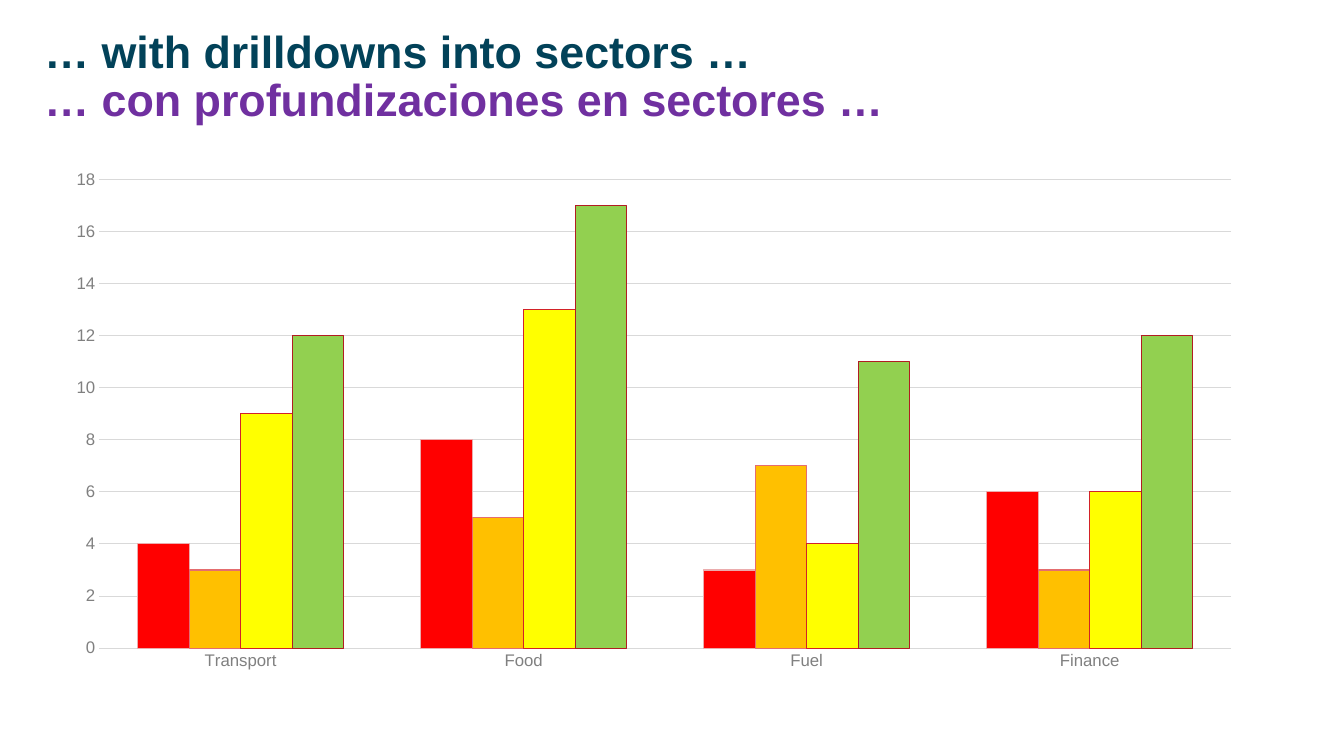
import pptx
import pptx.chart.data
import pptx.dml.color
import pptx.enum.chart
import pptx.enum.text
import pptx.util

Inches = pptx.util.Inches
Pt = pptx.util.Pt
RGBColor = pptx.dml.color.RGBColor

NAVY = RGBColor(0x02, 0x42, 0x59)
PURPLE = RGBColor(0x70, 0x30, 0xA0)
AXIS_GREY = RGBColor(0x80, 0x80, 0x80)
GRID_GREY = RGBColor(0xD9, 0xD9, 0xD9)
BLACK = RGBColor(0x00, 0x00, 0x00)
FONT = "Arial"

TITLE_BOX = (0.44, 0.16, 11.93, 1.23)
CHART_BOX = (0.52, 1.59, 11.93, 5.16)

TITLE_LINES = [
    ("… with drilldowns into sectors …", NAVY),
    ("… con profundizaciones en sectores …", PURPLE),
]
SECTORS = ["Transport", "Food", "Fuel", "Finance"]
# Name, values, fill, outline
SERIES = [
    ("Series 1", (4, 8, 3, 6), RGBColor(0xFF, 0x00, 0x00), RGBColor(0xEB, 0xAC, 0xAD)),
    ("Series 2", (3, 5, 7, 3), RGBColor(0xFF, 0xC0, 0x00), RGBColor(0xE4, 0x6D, 0x6F)),
    ("Series 3", (9, 13, 4, 6), RGBColor(0xFF, 0xFF, 0x00), RGBColor(0xD2, 0x22, 0x28)),
    ("Series 4", (12, 17, 11, 12), RGBColor(0x92, 0xD0, 0x50), RGBColor(0xB1, 0x1D, 0x22)),
]


def style_font(font, size, color, bold=False):
    font.name = FONT
    font.size = Pt(size)
    font.bold = bold
    font.color.rgb = color


def fill_title(title, box):
    """Place the two-language title in the given box."""
    title.left, title.top, title.width, title.height = map(Inches, box)
    frame = title.text_frame
    frame.margin_left = frame.margin_right = 0
    frame.margin_top = frame.margin_bottom = 0
    frame.word_wrap = True
    frame.auto_size = pptx.enum.text.MSO_AUTO_SIZE.NONE
    frame.vertical_anchor = pptx.enum.text.MSO_ANCHOR.MIDDLE
    para = frame.paragraphs[0]
    para.text = "\v".join(line for line, color in TITLE_LINES)
    para.alignment = pptx.enum.text.PP_ALIGN.LEFT
    para.line_spacing = 0.9
    for span, (line, color) in zip(para.runs, TITLE_LINES):
        style_font(span.font, 32, color, bold=True)


def add_sector_chart(page, box):
    """Draw the clustered columns by sector in the given box."""
    data = pptx.chart.data.CategoryChartData()
    data.categories = SECTORS
    for name, values, fill, outline in SERIES:
        data.add_series(name, values)
    kind = pptx.enum.chart.XL_CHART_TYPE.COLUMN_CLUSTERED
    chart = page.shapes.add_chart(kind, *map(Inches, box), data).chart
    chart.has_title = False
    chart.has_legend = False
    style_font(chart.font, 10, BLACK)

    # Columns
    plot = chart.plots[0]
    plot.vary_by_categories = False
    plot.gap_width = 150
    plot.overlap = 0
    for series, (name, values, fill, outline) in zip(plot.series, SERIES):
        series.format.fill.solid()
        series.format.fill.fore_color.rgb = fill
        series.format.line.color.rgb = outline
        series.format.line.width = Pt(0.75)

    # Axes and gridlines
    for axis in (chart.category_axis, chart.value_axis):
        axis.major_tick_mark = pptx.enum.chart.XL_TICK_MARK.NONE
        axis.minor_tick_mark = pptx.enum.chart.XL_TICK_MARK.NONE
        axis.format.line.fill.background()
        style_font(axis.tick_labels.font, 12, AXIS_GREY)
    value_axis = chart.value_axis
    value_axis.minimum_scale = 0
    value_axis.maximum_scale = 18
    value_axis.major_unit = 2
    value_axis.has_major_gridlines = True
    value_axis.major_gridlines.format.line.color.rgb = GRID_GREY
    value_axis.major_gridlines.format.line.width = Pt(0.75)


def main():
    deck = pptx.Presentation()
    deck.slide_width = Inches(13.33)
    deck.slide_height = Inches(7.5)
    page = deck.slides.add_slide(deck.slide_layouts[5])
    fill_title(page.shapes.title, TITLE_BOX)
    add_sector_chart(page, CHART_BOX)
    deck.save("out.pptx")


if __name__ == "__main__":
    main()
